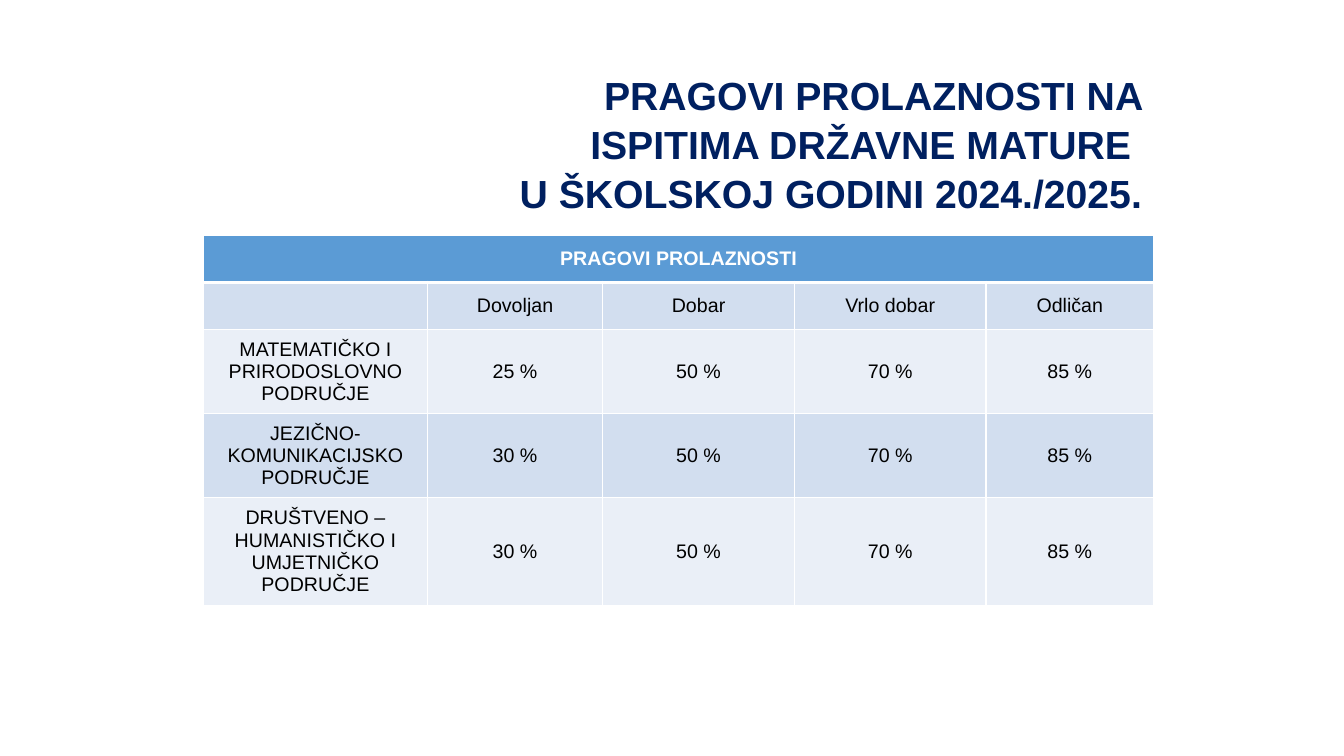
from lxml import etree
from pptx import Presentation
from pptx.dml.color import RGBColor
from pptx.enum.text import MSO_ANCHOR, MSO_AUTO_SIZE, PP_ALIGN
from pptx.oxml.ns import qn
from pptx.util import Cm, Pt

TOP, MIDDLE = MSO_ANCHOR.TOP, MSO_ANCHOR.MIDDLE
CENTER, RIGHT = PP_ALIGN.CENTER, PP_ALIGN.RIGHT
FIT = MSO_AUTO_SIZE.SHAPE_TO_FIT_TEXT

TITLE = "PRAGOVI PROLAZNOSTI NA ISPITIMA DRŽAVNE MATURE \vU ŠKOLSKOJ GODINI 2024./2025."
ROWS = [
    ("PRAGOVI PROLAZNOSTI", "", "", "", ""),
    ("", "Dovoljan", "Dobar", "Vrlo dobar", "Odličan"),
    ("MATEMATIČKO I PRIRODOSLOVNO PODRUČJE", "25 %", "50 %", "70 %", "85 %"),
    ("JEZIČNO-KOMUNIKACIJSKO PODRUČJE", "30 %", "50 %", "70 %", "85 %"),
    ("DRUŠTVENO – HUMANISTIČKO I UMJETNIČKO PODRUČJE", "30 %", "50 %", "70 %", "85 %"),
]
WIDTHS = [5.64, 4.42, 4.83, 4.83, 4.22]
HEIGHTS = [1.19, 1.19, 2.11, 2.11, 2.72]
COLORS = {"title": "002060", "head": "5B9BD5", "dark": "D2DEEF",
          "light": "EAEFF7", "line": "FFFFFF", "text": "000000"}


def rgb(name):
    return RGBColor.from_string(COLORS[name])


def style(para, size, color, bold, align):
    para.alignment = align
    font = para.font
    font.name, font.size, font.bold = "Arial", Pt(size), bold
    font.color.rgb = rgb(color)


def border(cell, base):
    props = cell._tc.get_or_add_tcPr()
    for pos, side in enumerate("LRTB"):
        width = base if side == "B" else Pt(1)
        line = etree.Element(qn(f"a:ln{side}"), w=str(width))
        fill = etree.SubElement(line, qn("a:solidFill"))
        etree.SubElement(fill, qn("a:srgbClr"), val=COLORS["line"])
        props.insert(pos, line)


def add_title(slide):
    title = slide.shapes.title
    title.left, title.top = Cm(12.42), Cm(1.6)
    title.width, title.height = Cm(16.61), Cm(3.84)
    frame = title.text_frame
    frame.text = TITLE
    frame.word_wrap, frame.auto_size = True, FIT
    frame.vertical_anchor = TOP
    para = frame.paragraphs[0]
    style(para, 28, "title", True, RIGHT)
    para.line_spacing = 1.05


def add_grid(slide):
    grid = slide.shapes.add_table(len(ROWS), len(WIDTHS), Cm(5.13), Cm(5.93),
                                  Cm(sum(WIDTHS)), Cm(sum(HEIGHTS))).table
    for col, width in zip(grid.columns, WIDTHS):
        col.width = Cm(width)
    for r, (row, height) in enumerate(zip(ROWS, HEIGHTS)):
        grid.rows[r].height = Cm(height)
        head = r == 0
        back = "head" if head else "dark" if r % 2 else "light"
        for c, text in enumerate(row):
            cell = grid.cell(r, c)
            cell.text = text
            cell.vertical_anchor = MIDDLE
            cell.margin_left = cell.margin_right = Cm(0.18)
            cell.margin_top = cell.margin_bottom = Cm(0.1)
            cell.fill.solid()
            cell.fill.fore_color.rgb = rgb(back)
            border(cell, Pt(3 if head else 1))
            style(cell.text_frame.paragraphs[0], 14,
                  "line" if head else "text", head, CENTER)
    grid.cell(0, 0).merge(grid.cell(0, len(WIDTHS) - 1))


def main():
    prs = Presentation()
    prs.slide_width, prs.slide_height = Cm(33.87), Cm(19.05)
    slide = prs.slides.add_slide(prs.slide_layouts[5])
    add_grid(slide)
    add_title(slide)
    prs.save("out.pptx")


if __name__ == "__main__":
    main()
